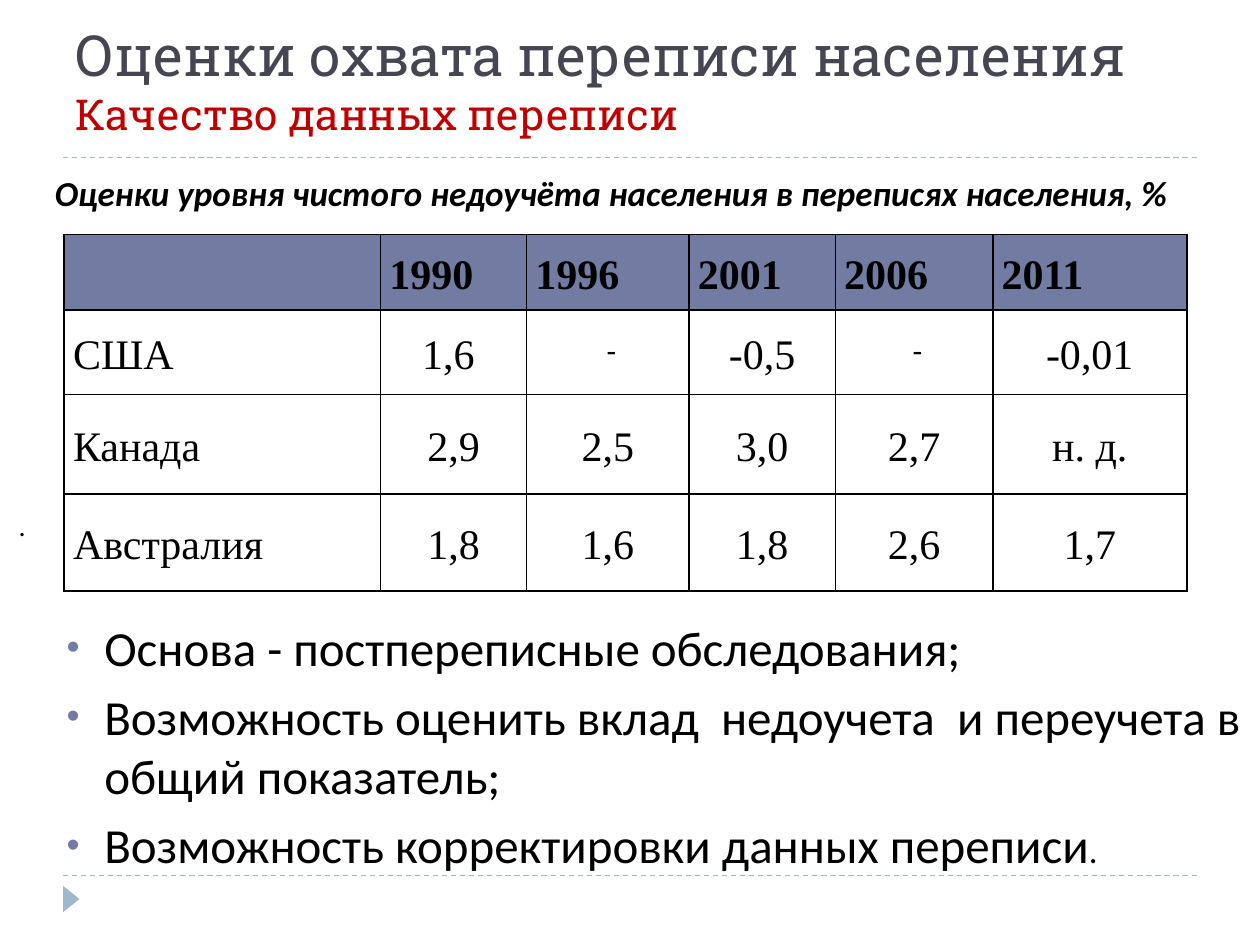
from dataclasses import dataclass

from lxml.etree import SubElement
from pptx import Presentation
from pptx.dml.color import RGBColor
from pptx.enum.dml import MSO_LINE
from pptx.enum.shapes import MSO_CONNECTOR, MSO_SHAPE
from pptx.enum.text import MSO_ANCHOR, MSO_AUTO_SIZE, PP_ALIGN
from pptx.oxml import parse_xml
from pptx.oxml.ns import nsdecls, qn
from pptx.slide import Slide
from pptx.util import Inches, Pt

BLACK = RGBColor(0x00, 0x00, 0x00)
SLATE = RGBColor(0x46, 0x46, 0x53)
RED = RGBColor(0xC0, 0x00, 0x00)
INDIGO = RGBColor(0x72, 0x7C, 0xA3)
PALE_BLUE = RGBColor(0x9F, 0xB8, 0xCD)
WIDTH, HEIGHT = Inches(10), Inches(7.5)


@dataclass(frozen=True)
class Style:
    font: str
    size: float
    color: RGBColor = BLACK
    bold: bool = False
    italic: bool = False


@dataclass(frozen=True)
class Area:
    left: float
    top: float
    width: float
    height: float

    def box(self) -> tuple[int, int, int, int]:
        return across(self.left), down(self.top), across(self.width), down(self.height)


HEADING = Style("Roboto Slab", 32.4, SLATE)
SUBHEADING = Style("Roboto Slab", 24.3, RED)
CAPTION = Style("Calibri", 20, bold=True, italic=True)
STRAY_DOT = Style("Calibri", 16)
CONCLUSION = Style("Calibri", 28)
FINAL_DOT = Style("Calibri", 20)
HEADER = Style("Times New Roman", 24, bold=True)
FIGURE = Style("Times New Roman", 24)
DASH = Style("Calibri", 18)

COLUMN_SHARES = [25.1, 11.6, 12.9, 11.6, 12.5, 15.4]
ROW_SHARES = [8, 8.93, 10.53, 10.27]
UNDERCOUNT = [
    ["", "1990", "1996", "2001", "2006", "2011"],
    ["США", "1,6 ", " -", "-0,5", " -", "-0,01"],
    ["Канада", "2,9", "2,5", "3,0", "2,7", "н. д."],
    ["Австралия", "1,8", "1,6", "1,8", "2,6", "1,7"],
]
CONCLUSIONS = [
    [("Основа - постпереписные обследования;", CONCLUSION)],
    [("Возможность оценить вклад  недоучета  и переучета в общий показатель;", CONCLUSION)],
    [("Возможность корректировки данных переписи", CONCLUSION), (".", FINAL_DOT)],
]


def across(percent: float) -> int:
    return round(WIDTH * percent / 100)


def down(percent: float) -> int:
    return round(HEIGHT * percent / 100)


def add_run(paragraph, text: str, style: Style) -> None:
    run = paragraph.add_run()
    run.text = text
    run.font.name, run.font.size = style.font, Pt(style.size)
    run.font.bold, run.font.italic = style.bold, style.italic
    run.font.color.rgb = style.color


def add_text_frame(slide: Slide, area: Area):
    frame = slide.shapes.add_textbox(*area.box()).text_frame
    frame.word_wrap = True
    return frame


def add_rule(slide: Slide, height_share: float) -> None:
    y = down(height_share)
    rule = slide.shapes.add_connector(MSO_CONNECTOR.STRAIGHT, across(5), y, across(95), y)
    rule.line.color.rgb = PALE_BLUE
    rule.line.width = Pt(0.75)
    rule.line.dash_style = MSO_LINE.DASH
    SubElement(rule._element.spPr, qn("a:effectLst"))


def add_marker(slide: Slide) -> None:
    marker = slide.shapes.add_shape(
        MSO_SHAPE.ISOSCELES_TRIANGLE, *Area(4.6, 94.27, 2.1, 1.73).box())
    marker.rotation = 90
    marker.shadow.inherit = False
    marker.fill.solid()
    marker.fill.fore_color.rgb = PALE_BLUE
    marker.line.fill.background()


def fill_title(slide: Slide) -> None:
    title = slide.shapes.title
    title.left, title.top, title.width, title.height = Area(5, 2.27, 90, 13.07).box()
    frame = title.text_frame
    frame.word_wrap = True
    frame.auto_size = MSO_AUTO_SIZE.NONE
    frame.vertical_anchor = MSO_ANCHOR.BOTTOM
    heading = frame.paragraphs[0]
    heading.alignment = PP_ALIGN.LEFT
    add_run(heading, "Оценки охвата переписи населения", HEADING)
    heading.add_line_break()
    add_run(heading, "Качество данных переписи", SUBHEADING)


def add_borders(cell) -> None:
    properties = cell._tc.get_or_add_tcPr()
    for position, side in enumerate("LRTB"):
        properties.insert(position, parse_xml(
            f'<a:ln{side} {nsdecls("a")} w="12700"><a:solidFill>'
            f'<a:srgbClr val="{BLACK}"/></a:solidFill></a:ln{side}>'))


def fill_cell(cell, text: str, is_header: bool, is_label: bool) -> None:
    if is_header:
        cell.fill.solid()
        cell.fill.fore_color.rgb = INDIGO
    else:
        cell.fill.background()
    add_borders(cell)
    cell.vertical_anchor = MSO_ANCHOR.MIDDLE
    cell.margin_left = cell.margin_right = Inches(0.07)
    cell.margin_top = cell.margin_bottom = 0
    if not text:
        return
    entry = cell.text_frame.paragraphs[0]
    entry.alignment = PP_ALIGN.JUSTIFY if is_header or is_label else PP_ALIGN.CENTER
    is_dash = text.strip() == "-"
    if not is_dash:
        entry.line_spacing = 1.15
        entry.space_before = Pt(3)
    add_run(entry, text, HEADER if is_header else DASH if is_dash else FIGURE)


def add_undercount_table(slide: Slide) -> None:
    area = Area(5.1, 24.8, sum(COLUMN_SHARES), sum(ROW_SHARES))
    table = slide.shapes.add_table(len(ROW_SHARES), len(COLUMN_SHARES), *area.box()).table
    table.horz_banding = False
    for column, share in zip(table.columns, COLUMN_SHARES):
        column.width = across(share)
    for row, share in zip(table.rows, ROW_SHARES):
        row.height = down(share)
    for r, entries in enumerate(UNDERCOUNT):
        for c, text in enumerate(entries):
            fill_cell(table.cell(r, c), text, r == 0, c == 0)


def add_conclusions(slide: Slide) -> None:
    frame = add_text_frame(slide, Area(4.3, 64.67, 95.7, 28.4))
    for i, runs in enumerate(CONCLUSIONS):
        conclusion = frame.add_paragraph() if i else frame.paragraphs[0]
        conclusion.space_before = Pt(6)
        properties = conclusion._p.get_or_add_pPr()
        properties.set("marL", str(Inches(0.3)))
        properties.set("indent", str(-Inches(0.3)))
        bullet_color = SubElement(properties, qn("a:buClr"))
        SubElement(bullet_color, qn("a:srgbClr"), val=str(INDIGO))
        SubElement(properties, qn("a:buSzPct"), val="76000")
        SubElement(properties, qn("a:buFont"), typeface="Arial")
        SubElement(properties, qn("a:buChar"), char="•")
        for text, style in runs:
            add_run(conclusion, text, style)


def main() -> None:
    deck = Presentation()
    deck.slide_width, deck.slide_height = WIDTH, HEIGHT
    slide = deck.slides.add_slide(deck.slide_layouts[5])
    for height_share in (92.67, 16.67):
        add_rule(slide, height_share)
    add_marker(slide)
    fill_title(slide)
    add_undercount_table(slide)
    caption = add_text_frame(slide, Area(2.8, 17.47, 92.1, 5.87)).paragraphs[0]
    caption.alignment = PP_ALIGN.CENTER
    add_run(caption, "Оценки уровня чистого недоучёта населения в переписях населения, % ", CAPTION)
    stray = add_text_frame(slide, Area(0, 53.2, 38.2, 4.93)).paragraphs[0]
    add_run(stray, " .", STRAY_DOT)
    add_conclusions(slide)
    deck.save("out.pptx")


if __name__ == "__main__":
    main()
